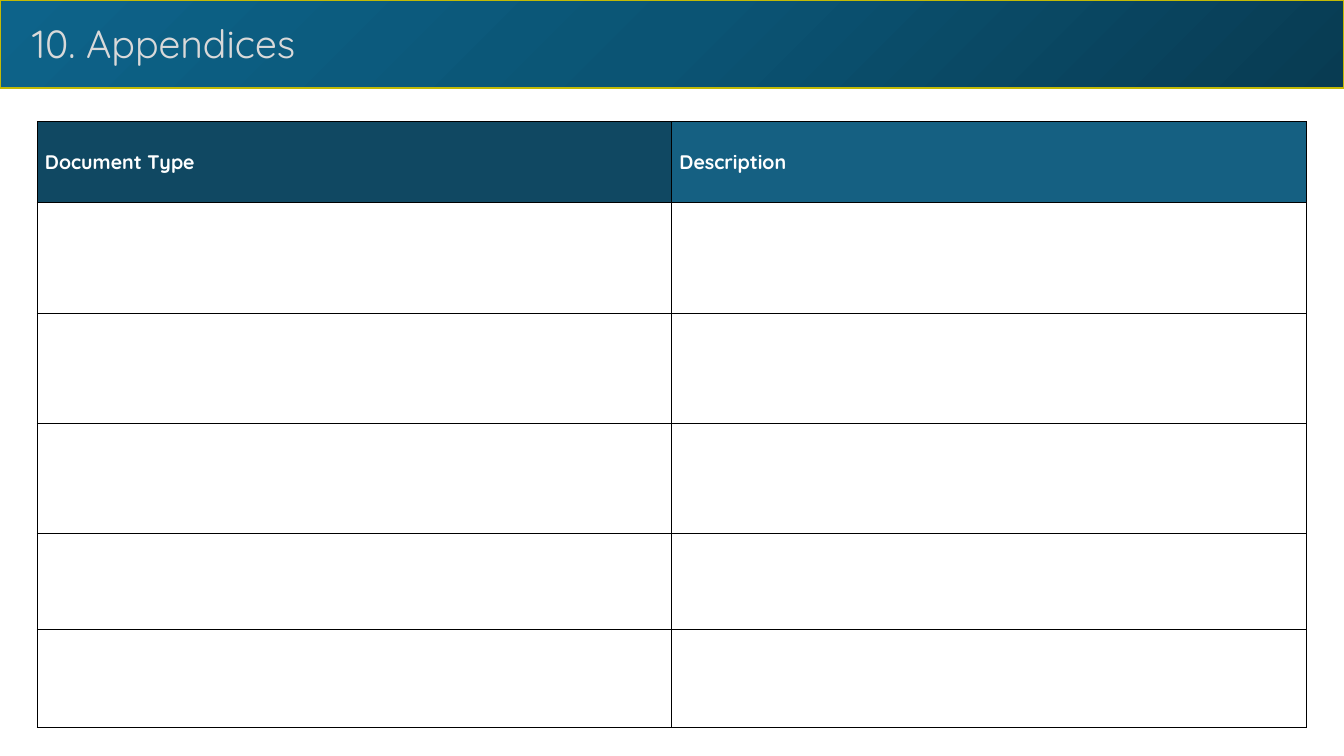
from copy import deepcopy

from lxml.etree import SubElement
from pptx import Presentation
from pptx.dml.color import RGBColor
from pptx.enum.shapes import MSO_SHAPE
from pptx.enum.text import MSO_ANCHOR, MSO_AUTO_SIZE
from pptx.oxml.ns import qn
from pptx.util import Cm, Pt

FONT = "Quicksand"
SLIDE_WIDTH, SLIDE_HEIGHT = Cm(33.87), Cm(19.05)
BANNER_STOPS = [(0, "083B52"), (0.5, "0B5474"), (1, "0D638A")]
HEADERS = [("Document Type", "104862"), ("Description", "156082")]
COLUMN_WIDTH = Cm(15.99)
ROW_HEIGHTS = [Cm(height) for height in (2.04, 2.79, 2.77, 2.77, 2.44, 2.46)]


def color(value):
    return RGBColor.from_string(value)


def write(frame, text, size, text_color, bold=False):
    para = frame.paragraphs[0]
    para.text = text
    para.font.name = FONT
    para.font.size = Pt(size)
    para.font.bold = bold
    para.font.color.rgb = color(text_color)


def fill_gradient(fill, stops, angle):
    """Fill with any number of (position, colour) stops; angle is counter-clockwise."""
    fill.gradient()
    fill.gradient_angle = angle
    first_stop, last_stop = fill._xPr.findall(".//" + qn("a:gs"))
    for _ in stops[2:]:
        last_stop.addprevious(deepcopy(first_stop))
    for stop, (position, value) in zip(fill.gradient_stops, stops):
        stop.position = position
        stop.color.rgb = color(value)


def add_banner(page):
    banner = page.shapes.add_shape(MSO_SHAPE.RECTANGLE, 0, 0, SLIDE_WIDTH, Cm(2.23))
    banner.shadow.inherit = False
    fill_gradient(banner.fill, BANNER_STOPS, 135)
    banner.line.color.rgb = color("C3BA05")
    banner.line.width = Pt(1.5)


def add_title(page, text):
    box = page.shapes.add_textbox(Cm(0.56), Cm(0.36), Cm(20.52), Cm(1.45))
    box.text_frame.word_wrap = True
    box.text_frame.auto_size = MSO_AUTO_SIZE.SHAPE_TO_FIT_TEXT
    write(box.text_frame, text, 28, "D9D9D9")


def add_borders(cell, width, value):
    properties = cell._tc.get_or_add_tcPr()
    for index, side in enumerate(("a:lnL", "a:lnR", "a:lnT", "a:lnB")):
        line = SubElement(properties, qn(side), w=str(Pt(width)))
        solid = SubElement(line, qn("a:solidFill"))
        SubElement(solid, qn("a:srgbClr"), val=value)
        properties.insert(index, line)


def style_cell(cell, fill_color):
    cell.fill.solid()
    cell.fill.fore_color.rgb = color(fill_color)
    cell.vertical_anchor = MSO_ANCHOR.MIDDLE
    cell.margin_left = cell.margin_right = Cm(0.19)
    cell.margin_top = cell.margin_bottom = Cm(0.13)
    add_borders(cell, 0.5, "000000")


def add_document_table(page):
    table = page.shapes.add_table(
        len(ROW_HEIGHTS), len(HEADERS), Cm(0.94), Cm(3.06),
        COLUMN_WIDTH * len(HEADERS), sum(ROW_HEIGHTS),
    ).table
    table.horz_banding = False
    for row, height in zip(table.rows, ROW_HEIGHTS):
        row.height = height
    for index, (label, header_color) in enumerate(HEADERS):
        table.columns[index].width = COLUMN_WIDTH
        for row_index in range(len(ROW_HEIGHTS)):
            style_cell(table.cell(row_index, index), "FFFFFF" if row_index else header_color)
        write(table.cell(0, index).text_frame, label, 14, "FFFFFF", bold=True)


def main():
    deck = Presentation()
    deck.slide_width, deck.slide_height = SLIDE_WIDTH, SLIDE_HEIGHT
    page = deck.slides.add_slide(deck.slide_layouts[6])
    add_banner(page)
    add_title(page, "10. Appendices")
    add_document_table(page)
    deck.save("out.pptx")


if __name__ == "__main__":
    main()
